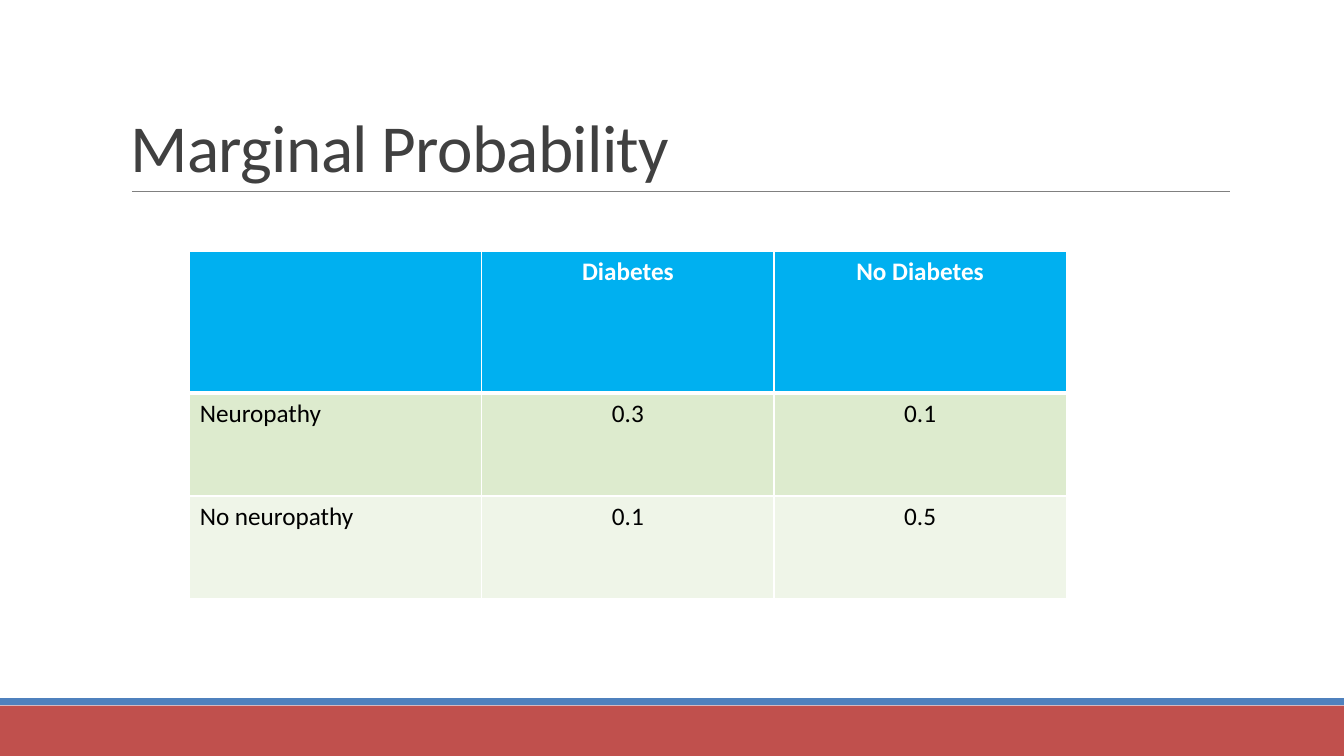
from pptx import Presentation
from pptx.dml.color import RGBColor
from pptx.enum.shapes import MSO_CONNECTOR as CONN, MSO_SHAPE as SHAPE
from pptx.enum.text import MSO_ANCHOR as ANCHOR, PP_ALIGN as ALIGN
from pptx.oxml.xmlchemy import OxmlElement as Element
from pptx.util import Pt


def rgb(color):
    return RGBColor.from_string(color)


class SlideBuilder:
    font = "Calibri"
    dark, rule, white, black = "404040", "808080", "FFFFFF", "000000"
    header, bands = "00B0F0", ("DDEBCE", "EFF5E8")

    def __init__(self, slide):
        self.slide = slide

    def style(self, p, size, color, bold=False):
        for r in p.runs:
            r.font.name, r.font.size, r.font.bold = self.font, Pt(size), bold
            r.font.color.rgb = rgb(color)

    def bar(self, x, y, w, h, color):
        sp = self.slide.shapes.add_shape(SHAPE.RECTANGLE, Pt(x), Pt(y), Pt(w), Pt(h))
        sp.shadow.inherit = False
        sp.fill.solid()
        sp.fill.fore_color.rgb = rgb(color)
        sp.line.fill.background()

    def line(self, x1, y1, x2, y2, color, width):
        ln = self.slide.shapes.add_connector(CONN.STRAIGHT, Pt(x1), Pt(y1), Pt(x2), Pt(y2))
        ln.line.color.rgb = rgb(color)
        ln.line.width = Pt(width)
        ln._element.spPr.append(Element("a:effectLst"))

    def title(self, x, y, w, h, text):
        tf = self.slide.shapes.add_textbox(Pt(x), Pt(y), Pt(w), Pt(h)).text_frame
        tf.word_wrap = True
        tf.vertical_anchor = ANCHOR.BOTTOM
        tf.text = text
        p = tf.paragraphs[0]
        p.line_spacing = 0.85
        self.style(p, 48, self.dark)
        p.runs[0].font._element.set("spc", "-50")

    def border(self, cell, side, width):
        ln = Element(f"a:ln{side}")
        ln.set("w", str(Pt(width)))
        fill, color = Element("a:solidFill"), Element("a:srgbClr")
        color.set("val", self.white)
        fill.append(color)
        ln.append(fill)
        cell._tc.get_or_add_tcPr().append(ln)

    def table(self, x, y, col_width, heights, rows):
        cols = len(rows[0])
        tbl = self.slide.shapes.add_table(len(rows), cols, Pt(x), Pt(y),
                                          Pt(col_width * cols), Pt(sum(heights))).table
        for col in tbl.columns:
            col.width = Pt(col_width)
        for i, texts in enumerate(rows):
            tbl.rows[i].height = Pt(heights[i])
            for j, text in enumerate(texts):
                self.cell(tbl.cell(i, j), text, i, j)

    def cell(self, cell, text, row, col):
        is_header = row == 0
        # Borders come before the fill in the cell properties
        for side in "LRTB":
            thick = (side == "B" and row == 0) or (side == "T" and row == 1)
            self.border(cell, side, 3 if thick else 0.96)
        cell.fill.solid()
        cell.fill.fore_color.rgb = rgb(self.header if is_header else self.bands[(row - 1) % 2])
        cell.text_frame.text = text
        p = cell.text_frame.paragraphs[0]
        p.alignment = ALIGN.CENTER if col else ALIGN.LEFT
        self.style(p, 18, self.white if is_header else self.black, is_header)


def main():
    prs = Presentation()
    prs.slide_width, prs.slide_height = Pt(960), Pt(540)
    s = SlideBuilder(prs.slides.add_slide(prs.slide_layouts[6]))

    # Footer bars
    s.bar(0, 504, 960, 36, "C0504D")
    s.bar(0, 498.7, 960, 5, "4F81BD")

    # Title and its rule
    s.line(94.2, 136.8, 878.9, 136.8, s.rule, 0.5)
    s.title(86.4, 22.6, 792, 114.2, "Marginal Probability")

    # Joint probabilities
    s.table(135.5, 179.5, 208.7, (101.4, 73.4, 73.4), [
        ("", "Diabetes", "No Diabetes"),
        ("Neuropathy", "0.3", "0.1"),
        ("No neuropathy", "0.1", "0.5"),
    ])

    prs.save("out.pptx")


if __name__ == "__main__":
    main()
